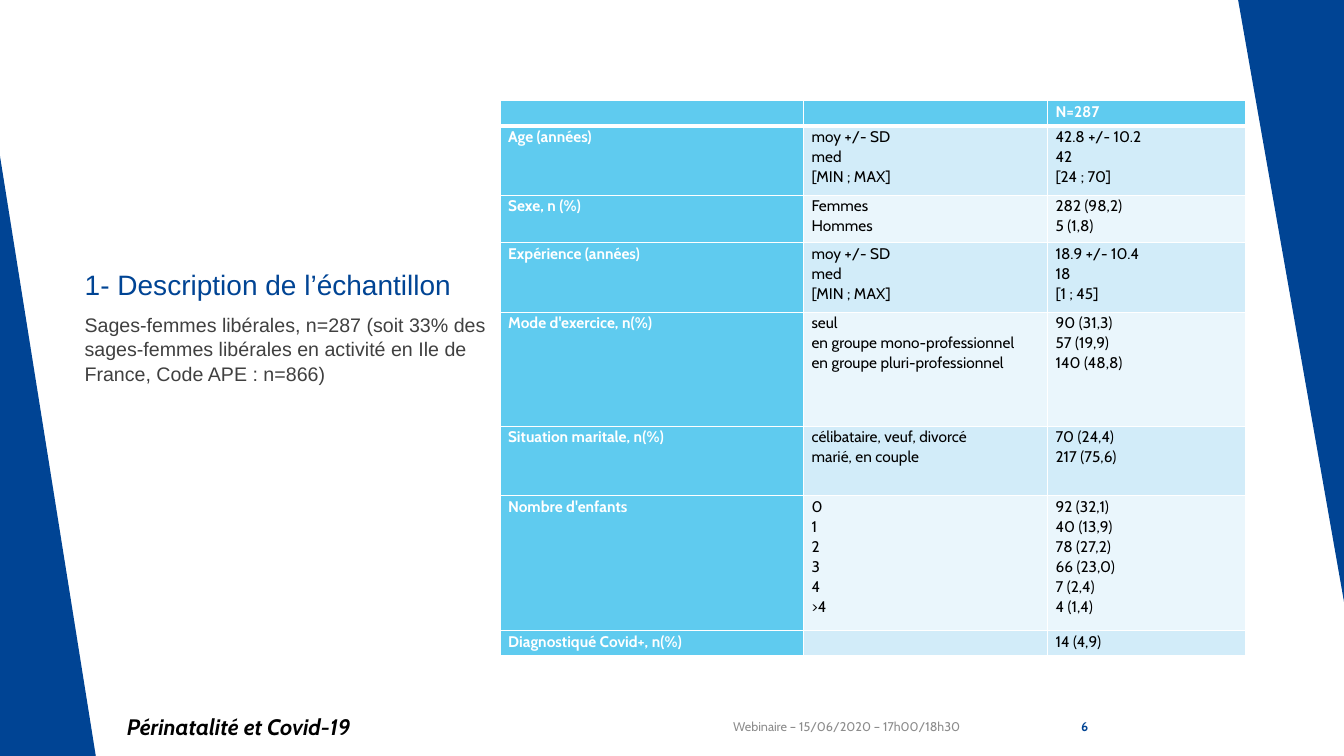
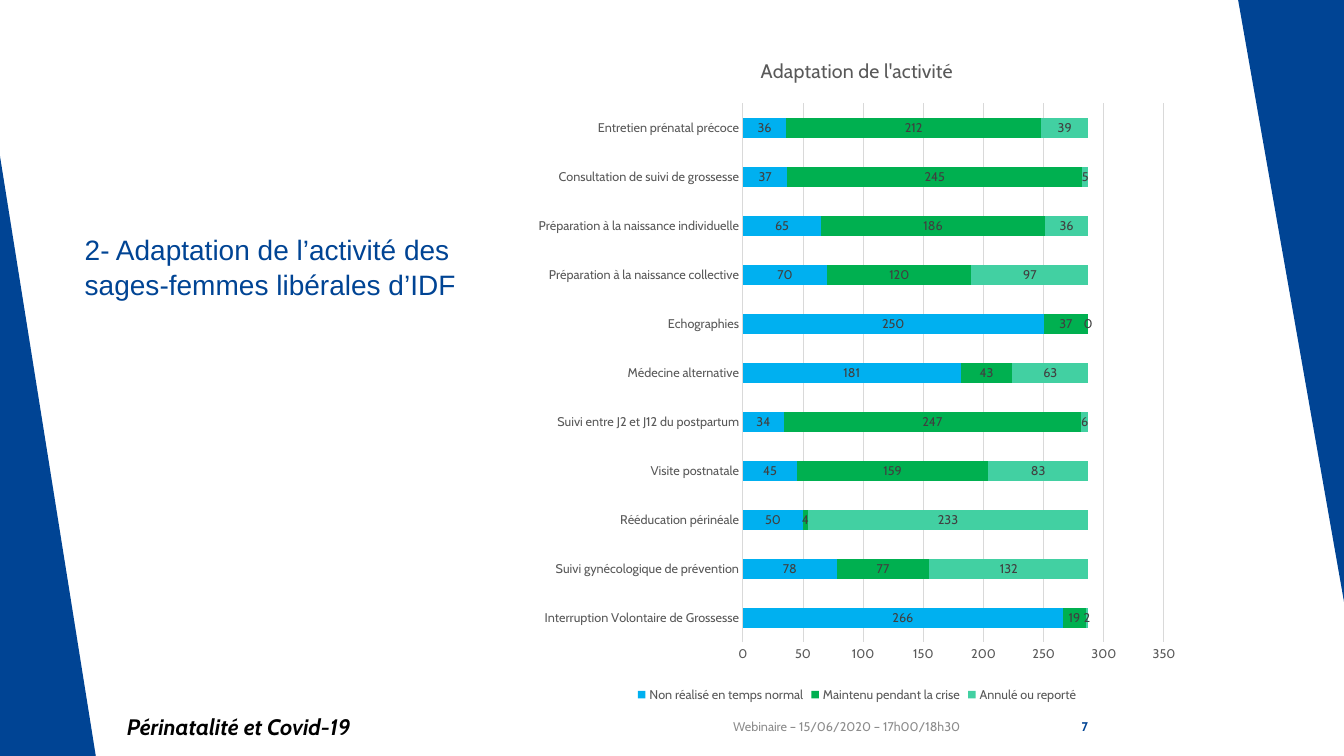
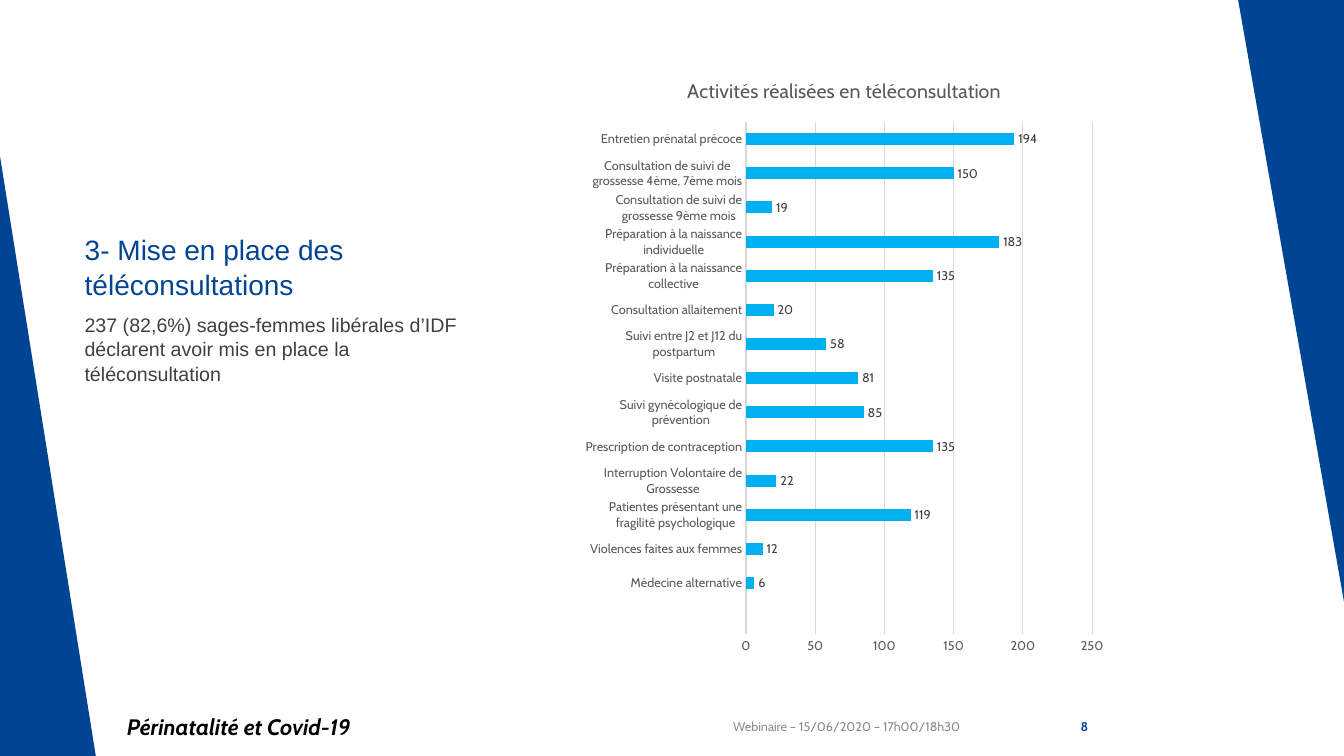
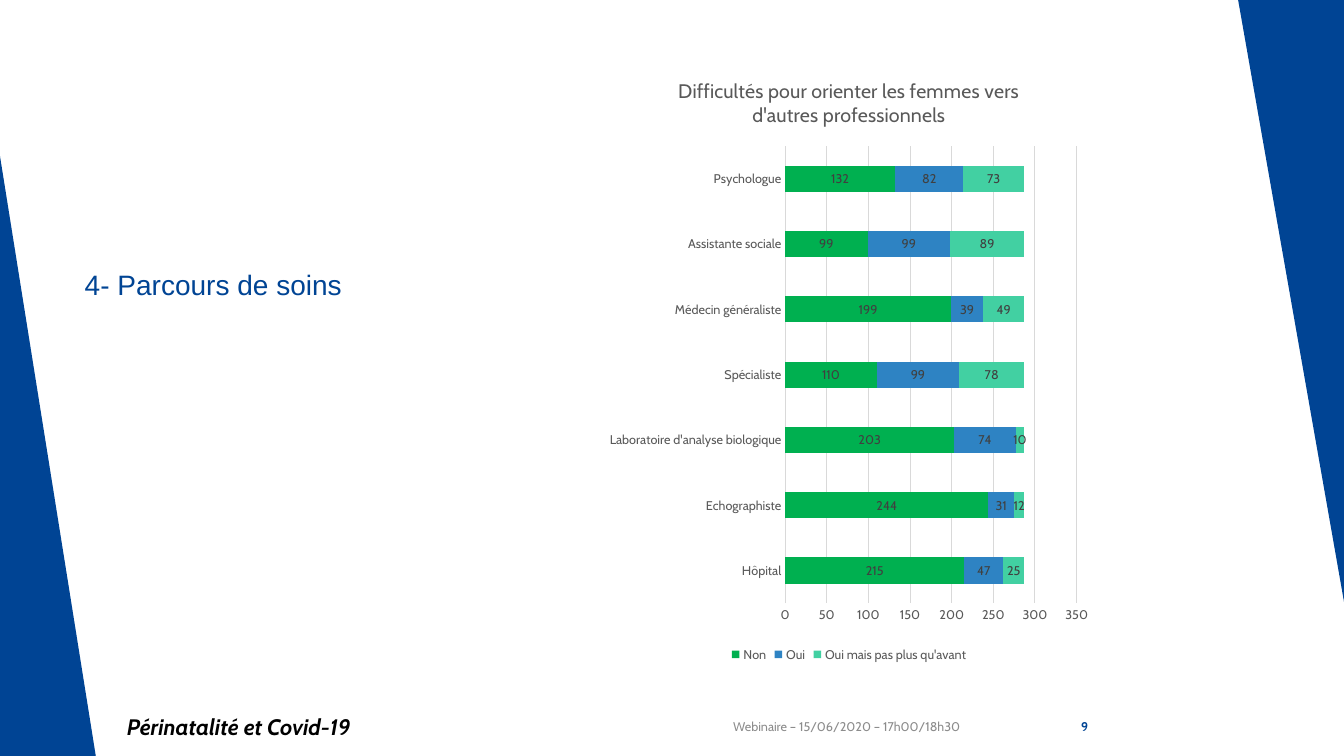
from lxml import etree
from pptx import Presentation
from pptx import util as u
from pptx.chart import data as cd
from pptx.dml import color
from pptx.enum import chart as ch
from pptx.enum import shapes, text
from pptx.oxml import ns

NAVY, WHITE, BLACK = "004494", "FFFFFF", "000000"
SKY, PALE, MIST = "5FCBEF", "D2ECF9", "EAF6FC"
GREY, DARK, RULE = "595959", "404040", "D9D9D9"
CYAN, GREEN, MINT, BLUE = "00B0F0", "00B050", "42D0A2", "2E83C3"

HEAD = dict(name="Arial", size=u.Pt(20), bold=False, color=NAVY)
BODY = dict(name="Arial", size=u.Pt(14), color=DARK)
DATE = dict(name="Cabin", size=u.Pt(9), color="8C8C8C")
EVENT = dict(name="Cabin", size=u.Pt(16), bold=True, italic=True, color=BLACK)
PAGE = dict(name="Cabin", size=u.Pt(9), bold=True, color=NAVY)
CELL = dict(name="Cabin", size=u.Pt(11), bold=False, color=BLACK)
LEAD = dict(CELL, bold=True, color=WHITE)
CHART = dict(name="Cabin", size=u.Pt(10), color=BLACK)
TITLE = dict(name="Cabin", size=u.Pt(14), bold=False, color=GREY)
TICK = dict(name="Cabin", size=u.Pt(9), color=GREY)
VALUE = dict(TICK, color=DARK)

LEFT, RIGHT = text.PP_ALIGN.LEFT, text.PP_ALIGN.RIGHT
TOP, MIDDLE, BOTTOM = (text.MSO_ANCHOR.TOP, text.MSO_ANCHOR.MIDDLE,
                       text.MSO_ANCHOR.BOTTOM)
FIRST = 6

ROWS = [
    (0.25, "", "", "N=287"),
    (0.69, "Age (années)", "moy +/- SD\nmed\n[MIN ; MAX]",
     "42.8 +/- 10.2\n42\n[24 ; 70]"),
    (0.47, "Sexe, n (%)", "Femmes\nHommes", "282 (98,2)\n5 (1,8)"),
    (0.69, "Expérience (années)", "moy +/- SD\nmed\n[MIN ; MAX]",
     "18.9 +/- 10.4\n18\n[1 ; 45]"),
    (1.13, "Mode d'exercice, n(%)",
     "seul\nen groupe mono-professionnel\nen groupe pluri-professionnel",
     "90 (31,3)\n57 (19,9)\n140 (48,8)"),
    (0.69, "Situation maritale, n(%)",
     "célibataire, veuf, divorcé\nmarié, en couple",
     "70 (24,4)\n217 (75,6)"),
    (1.34, "Nombre d'enfants", "0\n1\n2\n3\n4\n>4",
     "92 (32,1)\n40 (13,9)\n78 (27,2)\n66 (23,0)\n7 (2,4)\n4 (1,4)"),
    (0.25, "Diagnostiqué Covid+, n(%)", "", "14 (4,9)"),
]

ADAPT = dict(
    title="Adaptation de l'activité",
    cats=["Interruption Volontaire de Grossesse",
          "Suivi gynécologique de prévention", "Rééducation périnéale",
          "Visite postnatale", "Suivi entre J2 et J12 du postpartum",
          "Médecine alternative", "Echographies",
          "Préparation à la naissance collective",
          "Préparation à la naissance individuelle",
          "Consultation de suivi de grossesse", "Entretien prénatal précoce"],
    series=[("Non réalisé en temps normal", CYAN,
             [266, 78, 50, 45, 34, 181, 250, 70, 65, 37, 36]),
            ("Maintenu pendant la crise", GREEN,
             [19, 77, 4, 159, 247, 43, 37, 120, 186, 245, 212]),
            ("Annulé ou reporté", MINT,
             [2, 132, 233, 83, 6, 63, 0, 97, 36, 5, 39])])

REMOTE = dict(
    title="Activités réalisées en téléconsultation",
    cats=["", "Médecine alternative", "Violences faites aux femmes",
          "Patientes présentant une fragilité psychologique",
          "Interruption Volontaire de Grossesse",
          "Prescription de contraception",
          "Suivi gynécologique de prévention", "Visite postnatale",
          "Suivi entre J2 et J12 du postpartum", "Consultation allaitement",
          "Préparation à la naissance collective",
          "Préparation à la naissance individuelle",
          "Consultation de suivi de grossesse 9ème mois",
          "Consultation de suivi de grossesse 4ème, 7ème mois",
          "Entretien prénatal précoce"],
    series=[("Series 1", CYAN, [None, 6, 12, 119, 22, 135, 85, 81, 58, 20,
                                135, 183, 19, 150, 194])])

CARE = dict(
    title="Difficultés pour orienter les femmes vers d'autres professionnels",
    cats=["Hôpital", "Echographiste", "Laboratoire d'analyse biologique",
          "Spécialiste", "Médecin généraliste", "Assistante sociale",
          "Psychologue"],
    series=[("Non", GREEN, [215, 244, 203, 110, 199, 99, 132]),
            ("Oui", BLUE, [47, 31, 74, 99, 39, 99, 82]),
            ("Oui mais pas plus qu'avant", MINT,
             [25, 12, 10, 78, 49, 89, 73])])


def rgb(code):
    """Turn a hex string into a colour."""
    return color.RGBColor.from_string(code)


def style(font, look):
    """Set the format values of a font."""
    for key, val in look.items():
        if key == "color":
            font.color.rgb = rgb(val)
        else:
            setattr(font, key, val)


def paint(item, code):
    """Fill a shape, cell or series with one colour."""
    item.fill.solid()
    item.fill.fore_color.rgb = rgb(code)


def inch(box):
    """Turn a box of inches into lengths."""
    return [u.Inches(n) for n in box]


def write(frame, words, look, align=LEFT, anchor=TOP, space=1.0):
    """Write lines of text into a frame."""
    frame.word_wrap = True
    frame.vertical_anchor = anchor
    for num, line in enumerate(words.split("\n")):
        para = frame.paragraphs[0] if num == 0 else frame.add_paragraph()
        para.alignment = align
        para.line_spacing = space
        run = para.add_run()
        run.text = line
        style(run.font, look)


def label(slide, box, words, look, **opts):
    """Add a text box."""
    write(slide.shapes.add_textbox(*inch(box)).text_frame, words, look, **opts)


def wedge(slide, box, turn):
    """Add a slanted band at a slide edge."""
    band = slide.shapes.add_shape(shapes.MSO_SHAPE.RIGHT_TRIANGLE, *inch(box))
    band.rotation = turn
    band.shadow.inherit = False
    band.line.fill.background()
    paint(band, NAVY)


def footer(slide, top, page):
    """Add the event, date and page number on one line."""
    label(slide, (7.02, top, 2.6, 0.4), "Webinaire – 15/06/2020 – 17h00/18h30",
          DATE, align=RIGHT, anchor=MIDDLE)
    label(slide, (1.16, top, 5.35, 0.4), "Périnatalité et Covid-19", EVENT,
          anchor=MIDDLE)
    label(slide, (10.14, top, 0.75, 0.4), str(page), PAGE, align=RIGHT,
          anchor=MIDDLE)


def base(deck, head, note=None):
    """Add a slide with its bands, title, note and footer."""
    slide = deck.slides.add_slide(deck.slide_layouts[5])
    wedge(slide, (0, 1.55, 0.95, 5.95), 0)
    wedge(slide, (12.28, 0, 1.05, 5.97), 180)
    left, top, wide, high = 0.74, 1.64, 4.22, 1.4
    name = slide.shapes.title
    name.left, name.top, name.width, name.height = inch((left, top, wide, high))
    name.text_frame.auto_size = text.MSO_AUTO_SIZE.NONE
    write(name.text_frame, head, HEAD, anchor=BOTTOM, space=1.05)
    if note:
        label(slide, (left, top + high, wide, 2.83), note, BODY, space=1.05)
    footer(slide, 7.01, FIRST + len(deck.slides) - 1)
    return slide


def border(cell, widths):
    """Draw white cell borders: left, right, top, bottom."""
    props = cell._tc.get_or_add_tcPr()
    for num, (side, wide) in enumerate(zip("LRTB", widths)):
        line = etree.Element(ns.qn("a:ln" + side), w=str(u.Pt(wide)))
        fill = etree.SubElement(line, ns.qn("a:solidFill"))
        etree.SubElement(fill, ns.qn("a:srgbClr"), val=WHITE)
        props.insert(num, line)


def grid(slide, left, top, cols, rows):
    """Add the sample table."""
    high = sum(row[0] for row in rows)
    box = inch((left, top, sum(cols), high))
    table = slide.shapes.add_table(len(rows), len(cols), *box).table
    table.horz_banding = False
    for col, wide in zip(table.columns, cols):
        col.width = u.Inches(wide)
    for r, (tall, *words) in enumerate(rows):
        table.rows[r].height = u.Inches(tall)
        for c, word in enumerate(words):
            cell = table.cell(r, c)
            main = r == 0 or c == 0
            cell.margin_left = cell.margin_right = u.Inches(0.08)
            cell.margin_top = cell.margin_bottom = 0
            if word:
                write(cell.text_frame, word, LEAD if main else CELL, space=1.07)
            else:
                para = cell.text_frame.paragraphs[0]._p
                etree.SubElement(para, ns.qn("a:endParaRPr"), sz="1100")
            paint(cell, SKY if main else PALE if r % 2 else MIST)
            border(cell, (1, 1, 3 if r == 1 else 1, 3 if r == 0 else 1))


def bars(slide, box, title, cats, series):
    """Add a bar chart, stacked when it has several series."""
    many = len(series) > 1
    data = cd.CategoryChartData()
    data.categories = cats
    for name, _, vals in series:
        data.add_series(name, vals)
    kind = ch.XL_CHART_TYPE
    chart = slide.shapes.add_chart(
        kind.BAR_STACKED if many else kind.BAR_CLUSTERED, *inch(box),
        data).chart
    style(chart.font, CHART)
    chart.has_title = True
    run = chart.chart_title.text_frame.paragraphs[0].add_run()
    run.text = title
    style(run.font, TITLE)
    chart.has_legend = many
    if many:
        chart.legend.position = ch.XL_LEGEND_POSITION.BOTTOM
        chart.legend.include_in_layout = False
        style(chart.legend.font, TICK)
    plot = chart.plots[0]
    plot.vary_by_categories = False
    plot.gap_width = 150 if many else 182
    if many:
        plot.overlap = 100
    for item, (_, code, _) in zip(plot.series, series):
        paint(item.format, code)
        item.invert_if_negative = False
    plot.has_data_labels = True
    tags = plot.data_labels
    tags.show_value = True
    spot = ch.XL_LABEL_POSITION
    tags.position = spot.CENTER if many else spot.OUTSIDE_END
    style(tags.font, VALUE)
    cat, val = chart.category_axis, chart.value_axis
    for axis in (cat, val):
        axis.major_tick_mark = axis.minor_tick_mark = ch.XL_TICK_MARK.NONE
        style(axis.tick_labels.font, TICK)
    val.has_major_gridlines = True
    val.format.line.fill.background()
    for line in (cat.format.line, val.major_gridlines.format.line):
        line.color.rgb = rgb(RULE)
        line.width = u.Pt(0.75)


def main():
    """Build and save the deck."""
    deck = Presentation()
    deck.slide_width, deck.slide_height = inch((13.33, 7.5))
    slide = base(deck, "1- Description de l’échantillon",
                 "Sages-femmes libérales, n=287 (soit 33% des sages-femmes "
                 "libérales en activité en Ile de France, Code APE : n=866)")
    grid(slide, 4.96, 1, (3.01, 2.42, 1.96), ROWS)
    slide = base(deck, "2- Adaptation de l’activité des sages-femmes "
                 "libérales d’IDF")
    bars(slide, (5.21, 0.35, 6.58, 6.66), **ADAPT)
    slide = base(deck, "3- Mise en place des téléconsultations",
                 "237 (82,6%) sages-femmes libérales d’IDF déclarent avoir "
                 "mis en place la téléconsultation")
    bars(slide, (5.7, 0.56, 5.35, 6.05), **REMOTE)
    slide = base(deck, "4- Parcours de soins")
    bars(slide, (5.95, 0.56, 4.94, 6.05), **CARE)
    deck.save("out.pptx")


if __name__ == "__main__":
    main()
